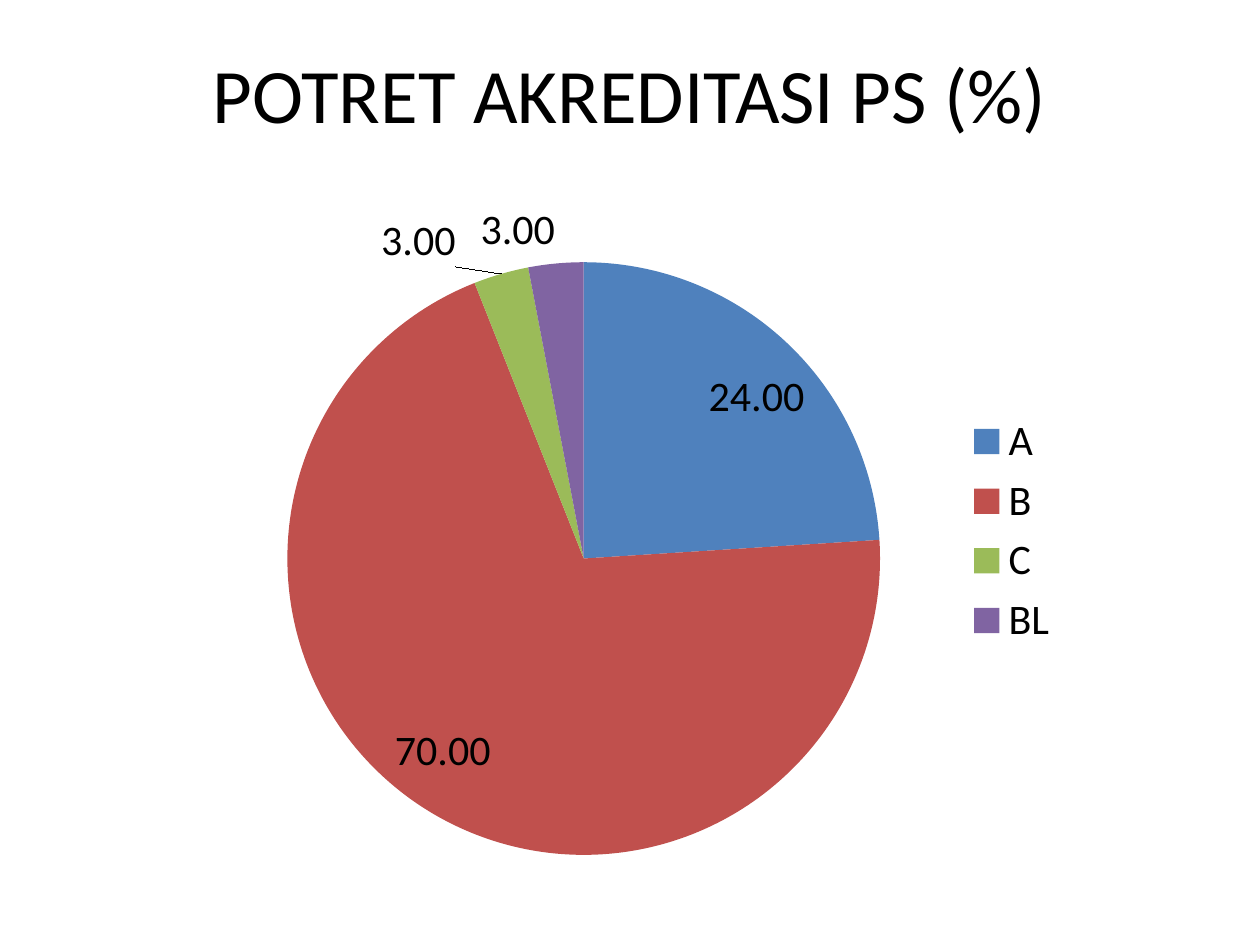
import pptx
import pptx.chart.data
import pptx.dml.color
import pptx.enum.chart
import pptx.enum.text
import pptx.oxml
import pptx.oxml.ns
import pptx.util
from pptx.dml.color import RGBColor
from pptx.util import Inches

BLACK = RGBColor(0x00, 0x00, 0x00)
BLUE = RGBColor(0x4F, 0x81, 0xBD)
RED = RGBColor(0xC0, 0x50, 0x4D)
GREEN = RGBColor(0x9B, 0xBB, 0x59)
PURPLE = RGBColor(0x80, 0x64, 0xA2)

GRADES = [("A", 24, BLUE), ("B", 70, RED), ("C", 3, GREEN), ("BL", 3, PURPLE)]


def set_font(font, size):
    font.name = "Calibri"
    font.size = pptx.util.Pt(size)
    font.color.rgb = BLACK


def make_layout(**settings):
    """Return a c:layout element with the given manual layout settings."""
    parts = "".join(f'<c:{name} val="{value}"/>' for name, value in settings.items())
    return pptx.oxml.parse_xml(
        f'<c:layout {pptx.oxml.ns.nsdecls("c")}>'
        f"<c:manualLayout>{parts}</c:manualLayout></c:layout>"
    )


def add_title(page, text, left, top, width, height):
    box = page.shapes.add_textbox(left, top, width, height)
    frame = box.text_frame
    frame.word_wrap = True
    frame.vertical_anchor = pptx.enum.text.MSO_ANCHOR.MIDDLE
    para = frame.paragraphs[0]
    para.text = text
    para.alignment = pptx.enum.text.PP_ALIGN.CENTER
    set_font(para.font, 44)


def add_grade_pie(page, left, top, width, height):
    data = pptx.chart.data.CategoryChartData(number_format="0.00")
    data.categories = [name for name, _, _ in GRADES]
    data.add_series("Series 1", [value for _, value, _ in GRADES])
    chart = page.shapes.add_chart(
        pptx.enum.chart.XL_CHART_TYPE.PIE, left, top, width, height, data
    ).chart
    set_font(chart.font, 24)
    chart.has_title = False
    chart.has_legend = True
    chart.legend.position = pptx.enum.chart.XL_LEGEND_POSITION.RIGHT
    chart.legend.include_in_layout = False

    plot = chart.plots[0]
    plot.vary_by_categories = True
    series = plot.series[0]
    for index, (_, _, color) in enumerate(GRADES):
        fill = series.points[index].format.fill
        fill.solid()
        fill.fore_color.rgb = color

    best_fit = pptx.enum.chart.XL_LABEL_POSITION.BEST_FIT
    labels = series.data_labels
    labels.show_value = True
    labels.number_format = "0.00"
    labels.number_format_is_linked = False
    labels.position = best_fit
    set_font(labels.font, 24)

    # The C label moves left to clear its neighbour.
    label = series.points[2].data_label
    label.position = best_fit
    set_font(label.font, 24)
    label_element = labels._element.find(pptx.oxml.ns.qn("c:dLbl"))
    label_element.insert(1, make_layout(x=-0.05, y=0))

    plot_area = chart._chartSpace.chart.plotArea
    for layout in plot_area.findall(pptx.oxml.ns.qn("c:layout")):
        plot_area.remove(layout)
    plot_area.insert(0, make_layout(
        layoutTarget="inner", xMode="edge", yMode="edge",
        x=0.09, y=0.11, w=0.69, h=0.86,
    ))


def main():
    deck = pptx.Presentation()
    deck.slide_width = Inches(10)
    deck.slide_height = Inches(7.5)
    page = deck.slides.add_slide(deck.slide_layouts[6])
    add_grade_pie(page, Inches(1.64), Inches(1.48), Inches(6.88), Inches(5.47))
    add_title(page, "POTRET AKREDITASI PS (%)",
              Inches(0.5), Inches(0.3), Inches(9), Inches(0.87))
    deck.save("out.pptx")


if __name__ == "__main__":
    main()
